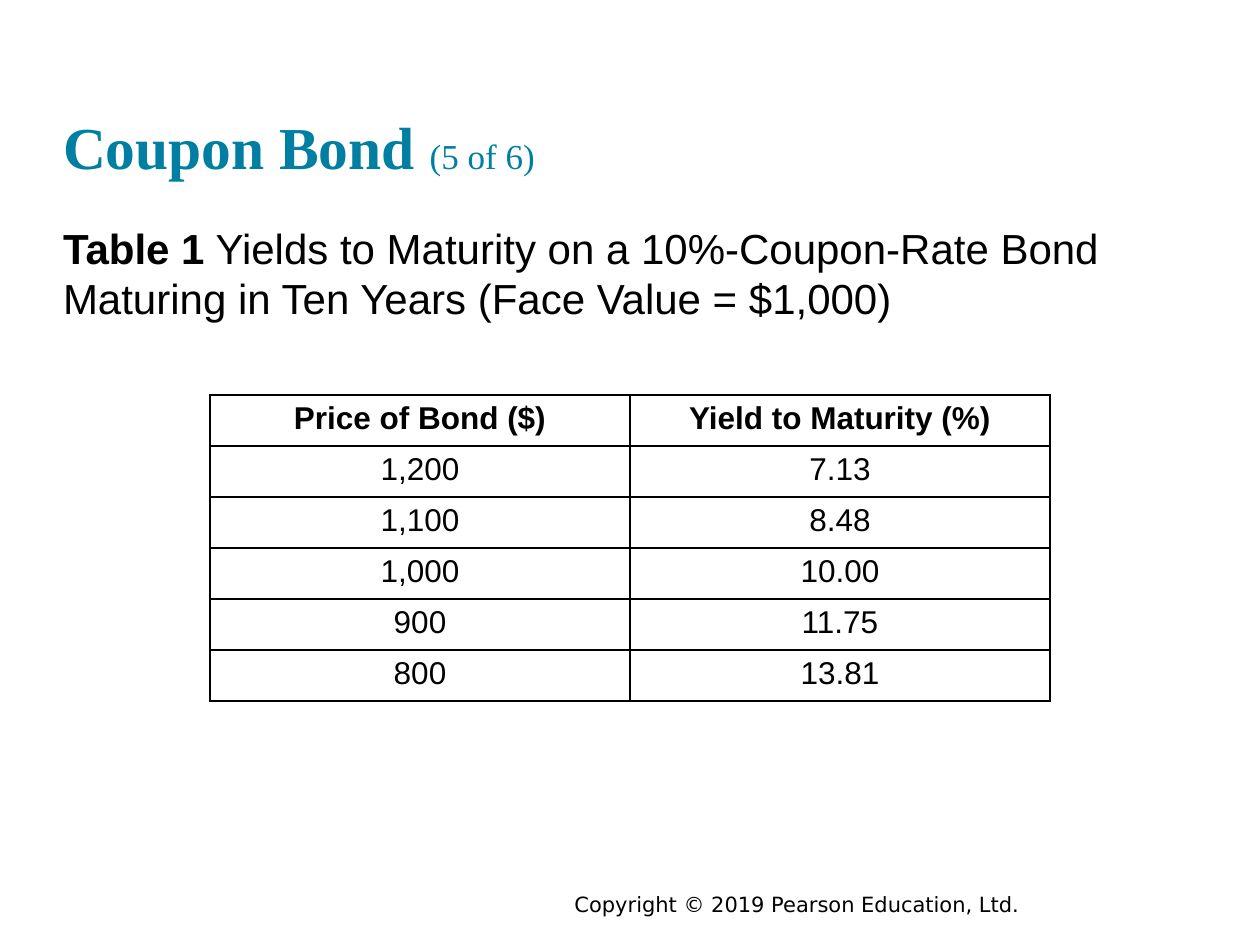
from lxml import etree
from pptx import Presentation
from pptx import util as u
from pptx.dml.color import RGBColor
from pptx.enum import text
from pptx.oxml import ns

PX = 914400 // 126
BLACK = "000000"
TEAL = "007FA3"


def set_font(target, name, size, color, bold=False):
    font = target.font
    font.name, font.size, font.bold = name, u.Pt(size), bold
    font.color.rgb = RGBColor.from_string(color)


def place(shape, left, top, width, height, anchor, margin=0):
    """Move the shape and set up its text frame; lengths in px."""
    shape.left, shape.top = left * PX, top * PX
    shape.width, shape.height = width * PX, height * PX
    frame = shape.text_frame
    frame.word_wrap = True
    frame.auto_size = text.MSO_AUTO_SIZE.NONE
    frame.vertical_anchor = anchor
    frame.margin_left = frame.margin_right = margin * PX
    frame.margin_top = frame.margin_bottom = margin // 2 * PX
    return frame.paragraphs[0]


presentation = Presentation()
presentation.slide_width, presentation.slide_height = u.Inches(10), u.Inches(7.5)
slide = presentation.slides.add_slide(presentation.slide_layouts[1])

# Copyright line
footer = slide.shapes.add_textbox(0, 0, PX, PX)
paragraph = place(footer, 372, 886, 850, 38, text.MSO_ANCHOR.TOP, margin=12)
paragraph.text = "Copyright © 2019 Pearson Education, Ltd."
paragraph.alignment = text.PP_ALIGN.CENTER
set_font(paragraph, "DejaVu Sans", 12, BLACK)

# Title
paragraph = place(slide.shapes.title, 63, 30, 1134, 151, text.MSO_ANCHOR.BOTTOM)
paragraph.alignment = text.PP_ALIGN.LEFT
for words, size, bold in [("Coupon Bond ", 34, True), ("(5 of 6)", 20, False)]:
    run = paragraph.add_run()
    run.text = words
    set_font(run, "Times New Roman", size, TEAL, bold)

# Table caption
paragraph = place(slide.placeholders[1], 63, 220, 1134, 105, text.MSO_ANCHOR.MIDDLE)
properties = paragraph._p.get_or_add_pPr()
properties.set("marL", "0")
properties.set("indent", "0")
etree.SubElement(properties, ns.qn("a:buNone"))
paragraph.space_before = u.Pt(0)
for words, bold in [
    ("Table 1", True),
    (" Yields to Maturity on a 10%-Coupon-Rate Bond Maturing in Ten Years (Face Value = $1,000)", False),
]:
    run = paragraph.add_run()
    run.text = words
    set_font(run, "Arial", 24, BLACK, bold)

# Yield table
rows = [
    ("Price of Bond ($)", "Yield to Maturity (%)"),
    ("1,200", "7.13"),
    ("1,100", "8.48"),
    ("1,000", "10.00"),
    ("900", "11.75"),
    ("800", "13.81"),
]
table = slide.shapes.add_table(
    len(rows), 2, 210 * PX, 395 * PX, 840 * PX, 51 * len(rows) * PX
).table
table.horz_banding = False
for row_index, values in enumerate(rows):
    for column_index, value in enumerate(values):
        cell = table.cell(row_index, column_index)
        cell.text = value
        paragraph = cell.text_frame.paragraphs[0]
        paragraph.alignment = text.PP_ALIGN.CENTER
        set_font(paragraph, "Arial", 18, BLACK, bold=row_index == 0)
        cell_properties = cell._tc.get_or_add_tcPr()
        for side in ("lnL", "lnR", "lnT", "lnB"):
            line = etree.SubElement(cell_properties, ns.qn(f"a:{side}"), w=str(u.Pt(1)))
            fill = etree.SubElement(line, ns.qn("a:solidFill"))
            etree.SubElement(fill, ns.qn("a:srgbClr"), val=BLACK)
        cell.fill.background()

presentation.save("out.pptx")
